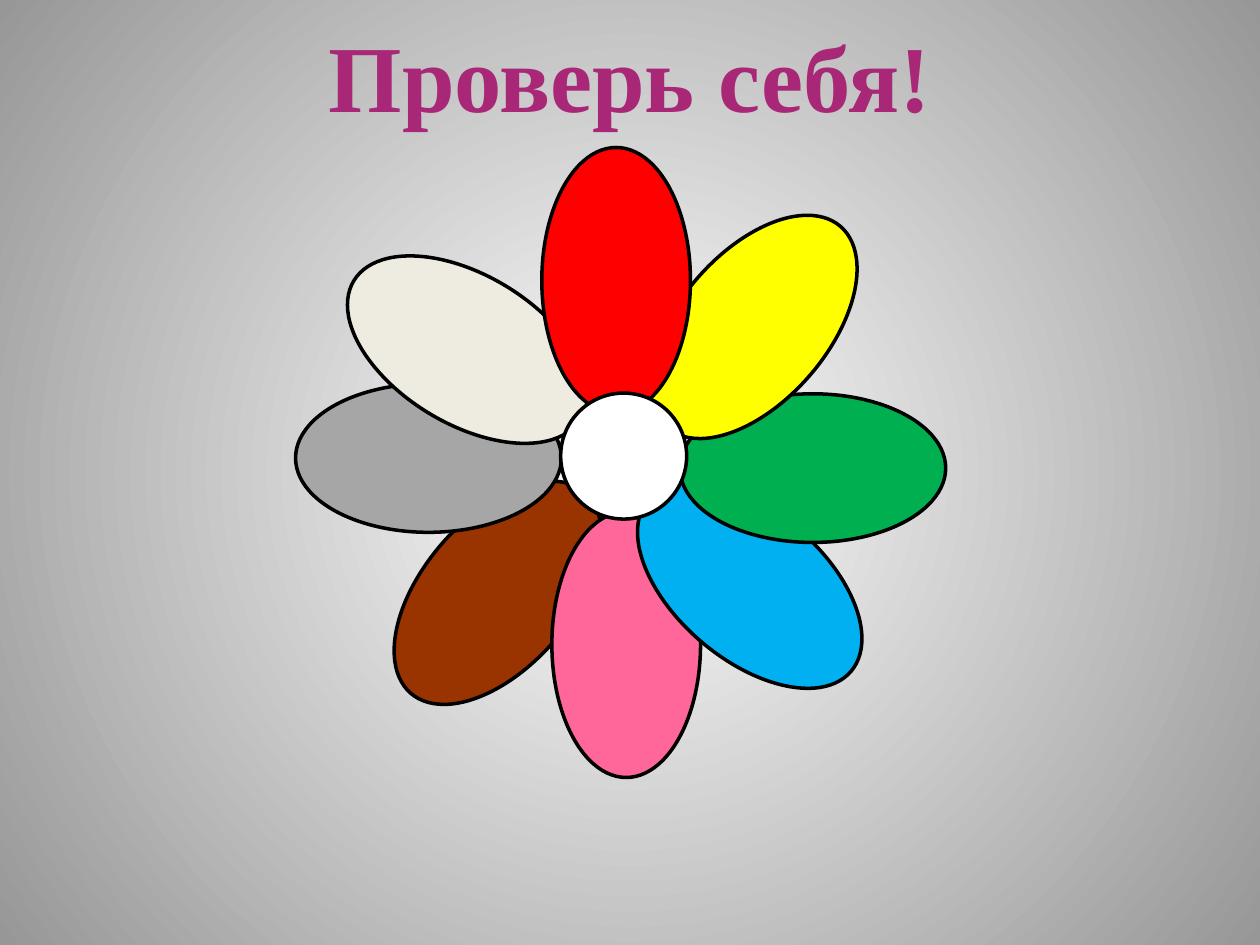
from lxml.etree import SubElement
from pptx import Presentation
from pptx.dml.color import RGBColor
from pptx.enum.shapes import MSO_SHAPE
from pptx.enum.text import MSO_ANCHOR, PP_ALIGN
from pptx.oxml.ns import qn
from pptx.util import Inches, Pt

TITLE = "Проверь себя!"
BACKGROUND = ("FFFFFF", "979797")  # centre, edge
PETAL_SIZE = (1.18, 2.11)
# left, top, rotation, colour; from back to front
PETALS = [
    (3.36, 3.65, 40.9, "993300"),
    (2.81, 2.58, 90, "A6A6A6"),
    (3.12, 1.72, 121.2, "EEECE1"),
    (4.38, 4.06, 180, "FF6699"),
    (5.36, 3.59, 130.3, "00B0F0"),
    (5.86, 2.66, 90, "00B050"),
    (5.39, 1.54, 40.9, "FFFF00"),
    (4.30, 1.17, 180, "FF0000"),
]


def rgb(color):
    return RGBColor.from_string(color)


def add_ellipse(s, left, top, width, height, color, rotation=0):
    sp = s.shapes.add_shape(MSO_SHAPE.OVAL, Inches(left), Inches(top),
                            Inches(width), Inches(height))
    sp.rotation = rotation
    sp.shadow.inherit = False
    sp.fill.solid()
    sp.fill.fore_color.rgb = rgb(color)
    sp.line.color.rgb = rgb("000000")
    sp.line.width = Pt(2)


def set_radial_background(s):
    fill = s.background.fill
    fill.gradient()
    for stop, color in zip(fill.gradient_stops, BACKGROUND):
        stop.color.rgb = rgb(color)
    grad = s.element.find(".//" + qn("a:gradFill"))
    grad.remove(grad.find(qn("a:lin")))
    circle = SubElement(grad, qn("a:path"), {"path": "circle"})
    SubElement(circle, qn("a:fillToRect"), dict.fromkeys("ltrb", "50000"))


def add_title(s):
    box = s.shapes.add_textbox(Inches(0.5), Inches(0.16), Inches(9), Inches(0.86))
    tf = box.text_frame
    tf.word_wrap = True
    tf.vertical_anchor = MSO_ANCHOR.MIDDLE
    p = tf.paragraphs[0]
    p.text = TITLE
    p.alignment = PP_ALIGN.CENTER
    p.font.name = "Times New Roman"
    p.font.size = Pt(54)
    p.font.bold = True
    p.font.color.rgb = rgb("A92777")


def main():
    prs = Presentation()
    prs.slide_width, prs.slide_height = Inches(10), Inches(7.5)
    s = prs.slides.add_slide(prs.slide_layouts[6])
    set_radial_background(s)

    # Flower: petals, then the centre on top
    for left, top, rotation, color in PETALS:
        add_ellipse(s, left, top, *PETAL_SIZE, color, rotation)
    add_ellipse(s, 4.45, 3.12, 1, 1, "FFFFFF")

    add_title(s)
    prs.save("out.pptx")


if __name__ == "__main__":
    main()
